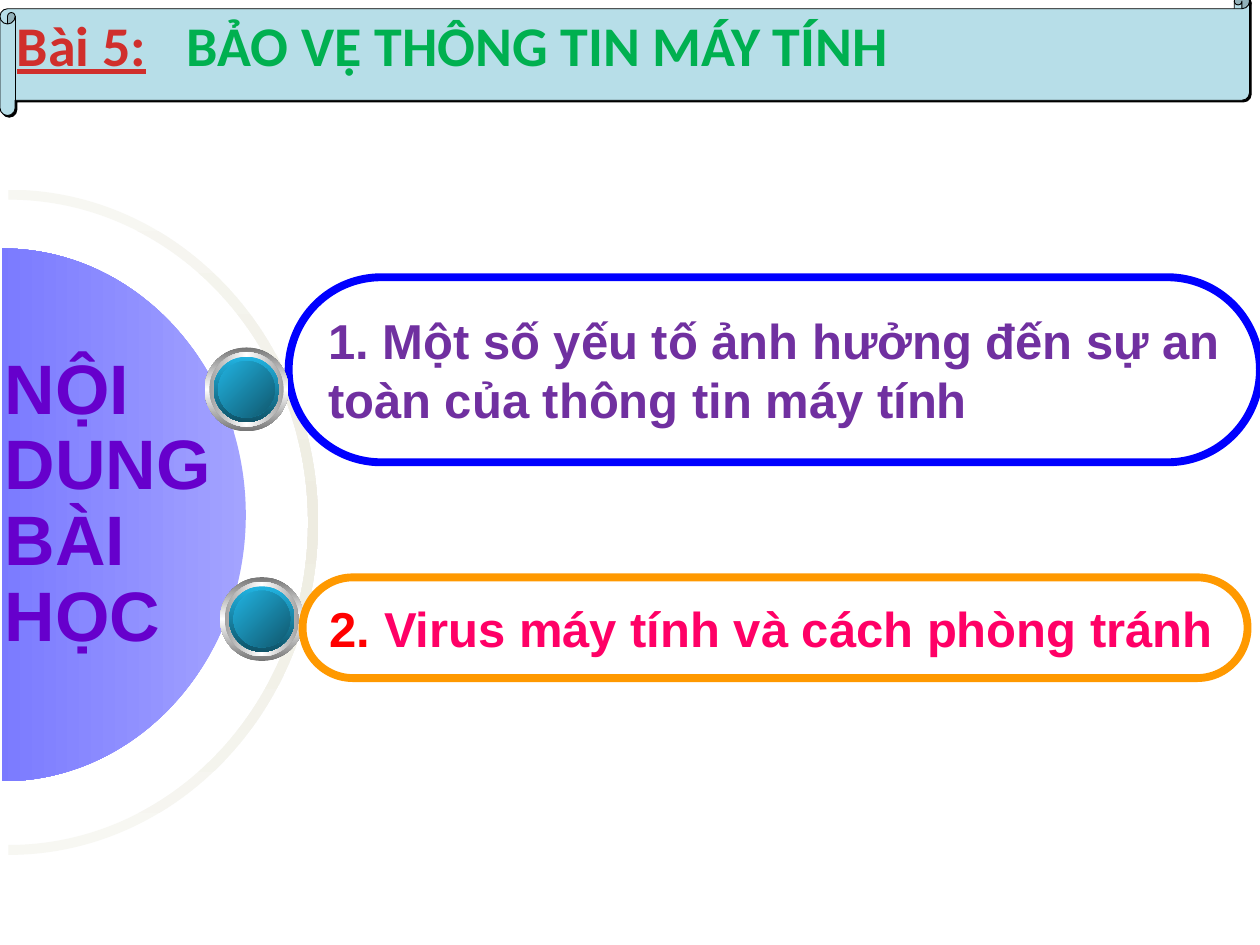
from lxml import etree
from pptx import Presentation
from pptx.dml.color import RGBColor
from pptx.enum.shapes import MSO_SHAPE
from pptx.enum.text import MSO_ANCHOR, MSO_AUTO_SIZE, PP_ALIGN
from pptx.oxml import parse_xml
from pptx.oxml.ns import qn
from pptx.util import Cm, Pt

BLACK = RGBColor(0x00, 0x00, 0x00)
PALE_BLUE = RGBColor(0xB7, 0xDE, 0xE8)
DARK_RED = RGBColor(0xD0, 0x2F, 0x2C)
GREEN = RGBColor(0x00, 0xB0, 0x50)
VIOLET = RGBColor(0x66, 0x00, 0xCC)
PURPLE = RGBColor(0x70, 0x30, 0xA0)
BLUE = RGBColor(0x00, 0x00, 0xFF)
ORANGE = RGBColor(0xFF, 0x99, 0x00)
RED = RGBColor(0xFF, 0x00, 0x00)
PINK = RGBColor(0xFF, 0x00, 0x66)

# Content, lengths in centimetres
LESSON = "Bài 5:"
TITLE = "BẢO VỆ THÔNG TIN MÁY TÍNH"
SIDE_LABEL = "NỘI DUNG BÀI HỌC"
PILLS = [
    ((5.82, 5.59, 19.58, 3.73), BLUE,
     [("1. Một số yếu tố ảnh hưởng đến sự an toàn của thông tin máy tính", PURPLE)]),
    ((6.1, 11.64, 19.05, 2.03), ORANGE,
     [("2. ", RED), ("Virus máy tính và cách phòng tránh", PINK)]),
]
UPPER_BEAD, LOWER_BEAD = (4.97, 7.85), (5.28, 12.48)
# Bead layers: diameter, clockwise angle, colours
BEAD_LAYERS = [
    (1.69, 90, ("767676", "FFFFFF", "767676")),
    (1.5, 0, ("A2A2A2", "FFFFFF", "A2A2A2")),
    (1.32, 90, ("21B3E1", "0F5368")),
    (1.14, 45, ("21B3E1", "10576D")),
]
# Arches, turned to face right: frame centre and size, rise, thickness, gradient
ARCHES = [
    ((0.1, 10.53), (13.41, 12.62), 6.24, 0.2, (0, ("F7F7F2", "EEECE1", "F7F7F2"))),
    ((0.04, 10.38), (10.74, 9.83), 4.91, None, (90, ("A3A3FF", "5050FF"))),
]
CURVE = 0.5523  # control length of a quarter ellipse


def set_gradient(shape, angle, colours):
    shape.fill.gradient()
    gradient = shape.element.spPr.find(qn("a:gradFill"))
    stops = gradient.find(qn("a:gsLst"))
    for stop in list(stops):
        stops.remove(stop)
    for index, colour in enumerate(colours):
        position = 100000 * index // (len(colours) - 1)
        stop = etree.SubElement(stops, qn("a:gs"), pos=str(position))
        etree.SubElement(stop, qn("a:srgbClr"), val=colour)
    gradient.find(qn("a:lin")).set("ang", str(angle * 60000))
    shape.line.fill.background()
    shape.shadow.inherit = False


def arch_points(center_x, base, radius_x, radius_y):
    """Start point and two Bezier curves of an upper half ellipse."""
    steps = [(-1, 0), (-1, CURVE), (-CURVE, 1), (0, 1), (CURVE, 1), (1, CURVE), (1, 0)]
    return [(Cm(center_x + x * radius_x), Cm(base - y * radius_y)) for x, y in steps]


def add_arch(page, center, size, rise, thickness, gradient):
    width, height = size
    base = center[1] - height / 2 + rise
    points = arch_points(center[0], base, width / 2, rise)
    curve_starts = [0, 3]
    if thickness:
        points += arch_points(center[0], base, width / 2 - thickness, rise - thickness)[::-1]
        curve_starts += [7, 10]
    builder = page.shapes.build_freeform(*points[0])
    builder.add_line_segments(points[1:], close=True)
    arch = builder.convert_to_shape()

    # Turn each run of three segments into one curve
    outline = arch.element.spPr.find(".//" + qn("a:path"))
    segments = outline.findall(qn("a:lnTo"))
    for start in curve_starts:
        curve = etree.Element(qn("a:cubicBezTo"))
        segments[start].addprevious(curve)
        for segment in segments[start:start + 3]:
            curve.append(segment[0])
            outline.remove(segment)

    # The frame is a whole ellipse, so the turn is about its centre
    outline.set("h", str(Cm(height)))
    arch.height = Cm(height)
    arch.rotation = 90
    set_gradient(arch, *gradient)


def write_text(shape, spans, font_name, size, anchor=MSO_ANCHOR.TOP):
    frame = shape.text_frame
    frame.word_wrap = True
    frame.auto_size = MSO_AUTO_SIZE.NONE
    frame.vertical_anchor = anchor
    para = frame.paragraphs[0]
    para.alignment = PP_ALIGN.LEFT
    para.font.name, para.font.size, para.font.bold = font_name, Pt(size), True
    for text, colour in spans:
        span = para.add_run()
        span.text = text
        span.font.color.rgb = colour
    return para


def add_bead(page, center):
    group = page.shapes.add_group_shape()
    for diameter, angle, colours in BEAD_LAYERS:
        left, top = (Cm(middle - diameter / 2) for middle in center)
        layer = group.shapes.add_shape(
            MSO_SHAPE.OVAL, left, top, Cm(diameter), Cm(diameter))
        set_gradient(layer, angle, colours)


def add_pill(page, place, colour, spans):
    pill = page.shapes.add_shape(MSO_SHAPE.ROUNDED_RECTANGLE, *map(Cm, place))
    pill.adjustments[0] = 0.5
    pill.shadow.inherit = False
    pill.fill.background()
    pill.line.color.rgb = colour
    pill.line.width = Pt(4.5)
    para = write_text(pill, spans, "Arial", 28, MSO_ANCHOR.MIDDLE)
    para.alignment = PP_ALIGN.JUSTIFY
    para.space_before = Pt(6.7)


def add_banner(page):
    scroll = page.shapes.add_shape(
        MSO_SHAPE.HORIZONTAL_SCROLL, Cm(0), Cm(-0.13), Cm(25.19), Cm(2.46))
    scroll.fill.solid()
    scroll.fill.fore_color.rgb = PALE_BLUE
    scroll.line.color.rgb = BLACK
    scroll.line.width = Pt(0.5)
    scroll.element.spPr.append(parse_xml(
        '<a:effectLst xmlns:a="http://schemas.openxmlformats.org/drawingml/2006/main">'
        '<a:outerShdw dist="17780" dir="2700000" algn="ctr" rotWithShape="0">'
        '<a:srgbClr val="000000"/></a:outerShdw></a:effectLst>'))

    lesson = page.shapes.add_textbox(Cm(0.09), Cm(0.08), Cm(3.43), Cm(1.35))
    write_text(lesson, [(LESSON, DARK_RED)], "Calibri", 32).runs[0].font.underline = True

    # The title goes in front of the scroll
    title = page.shapes.title
    title.left, title.top, title.width, title.height = map(Cm, (3.51, 0.08, 21.69, 1.35))
    write_text(title, [(TITLE, GREEN)], "Calibri", 32)
    lesson.element.addnext(title.element)


def main():
    deck = Presentation()
    deck.slide_width, deck.slide_height = Cm(25.4), Cm(19.05)
    page = deck.slides.add_slide(deck.slide_layouts[5])
    add_banner(page)

    # Ring and half disc at the left edge
    for arch in ARCHES:
        add_arch(page, *arch)
    label = page.shapes.add_textbox(Cm(-0.15), Cm(7.01), Cm(5.08), Cm(6.4))
    write_text(label, [(SIDE_LABEL, VIOLET)], "Arial", 40).line_spacing = 0.9

    # Topics, with the lower bead behind its pill and the upper one in front
    add_bead(page, LOWER_BEAD)
    for pill in PILLS:
        add_pill(page, *pill)
    add_bead(page, UPPER_BEAD)

    deck.save("out.pptx")


if __name__ == "__main__":
    main()
